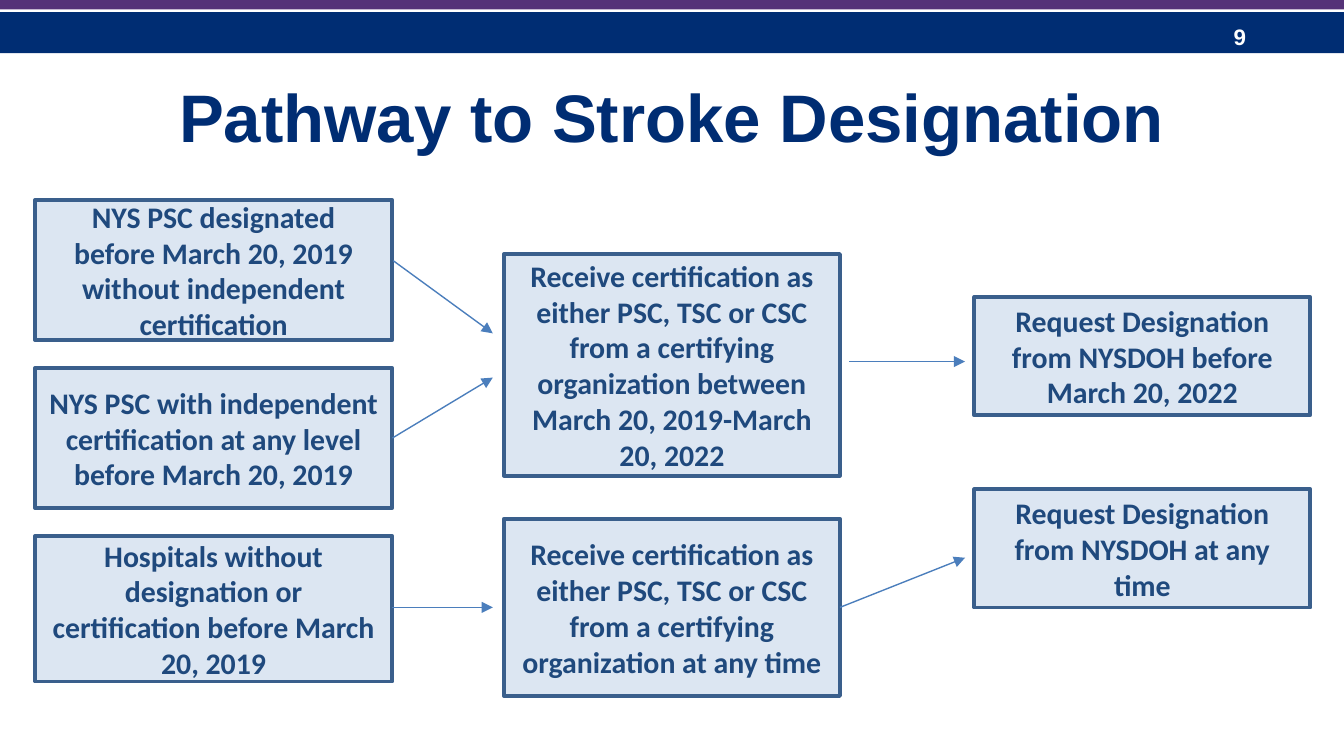
from lxml import etree
from pptx import Presentation
from pptx.dml import color
from pptx.enum import shapes, text
from pptx.oxml import ns
from pptx.util import Pt

COLORS = {
    "navy": "002D73", "purple": "553278", "white": "FFFFFF",
    "box": "DCE6F2", "border": "3A5F8C", "label": "1F497D", "arrow": "4B7EBC",
}
FORMATS = {
    "number": {"name": "Arial", "size": Pt(12), "bold": True},
    "title": {"name": "Arial", "size": Pt(36), "bold": True},
    "step": {"name": "Calibri", "size": Pt(16), "bold": True},
}
STEPS = [
    (0, 107.3, 74.9, "NYS PSC designated before March 20, 2019 without independent certification"),
    (0, 197.3, 74.9, "NYS PSC with independent certification at any level before March 20, 2019"),
    (0, 287.3, 77.8, "Hospitals without designation or certification before March 20, 2019"),
    (1, 136.1, 118.8, "Receive certification as either PSC, TSC or CSC from a certifying "
                      "organization between March 20, 2019-March 20, 2022"),
    (1, 277.9, 95, "Receive certification as either PSC, TSC or CSC from a certifying "
                   "organization at any time"),
    (2, 159.1, 63.4, "Request Designation from NYSDOH before March 20, 2022"),
    (2, 262.1, 63.4, "Request Designation from NYSDOH at any time"),
]
COLUMNS = [(18.7, 191.5), (270, 180), (522, 180)]
ARROWS = [
    (210.7, 139.7, 264, 178.6),
    (210.2, 234.7, 264, 202.3),
    (210.2, 325.4, 264, 325.4),
    (455, 193.7, 517, 193.7),
    (450, 325.4, 517, 298.8),
]


def rgb(name):
    """Return the named colour."""
    return color.RGBColor.from_string(COLORS[name])


def write(shape, words, style, color_name, align, anchor):
    """Put one formatted paragraph into a shape."""
    frame = shape.text_frame
    frame.word_wrap = True
    frame.vertical_anchor = anchor
    paragraph = frame.paragraphs[0]
    paragraph.alignment = align
    run = paragraph.add_run()
    run.text = words
    for key, value in FORMATS[style].items():
        setattr(run.font, key, value)
    run.font.color.rgb = rgb(color_name)


def add_rectangle(slide, box, fill, border=None):
    """Draw a filled rectangle with an optional border."""
    shape = slide.shapes.add_shape(shapes.MSO_SHAPE.RECTANGLE, *map(Pt, box))
    shape.shadow.inherit = False
    shape.fill.solid()
    shape.fill.fore_color.rgb = rgb(fill)
    if border:
        shape.line.color.rgb = rgb(border)
        shape.line.width = Pt(2)
    else:
        shape.line.fill.background()
    return shape


def add_header(slide, left, top, width, height):
    """Draw the header bands and the slide number."""
    add_rectangle(slide, (left, top + 6.5, width, height - 6.5), "navy")
    number = slide.shapes.add_textbox(
        Pt(left + width - 66.2), Pt(top + 8.6), Pt(54), Pt(21.6))
    write(number, "9", "number", "white", text.PP_ALIGN.LEFT, text.MSO_ANCHOR.MIDDLE)
    add_rectangle(slide, (left, top - 1.5, width, 6.5), "purple")


def add_title(slide, left, top, width, height):
    """Write the centred title."""
    title = slide.shapes.add_textbox(Pt(left), Pt(top), Pt(width), Pt(height))
    title.text_frame.margin_top = Pt(7)
    write(title, "Pathway to Stroke Designation", "title", "navy",
          text.PP_ALIGN.CENTER, text.MSO_ANCHOR.TOP)


def add_arrow(slide, start_x, start_y, end_x, end_y):
    """Draw a thin line with a triangle at its end."""
    arrow = slide.shapes.add_connector(
        shapes.MSO_CONNECTOR.STRAIGHT, *map(Pt, (start_x, start_y, end_x, end_y)))
    arrow.line.color.rgb = rgb("arrow")
    arrow.line.width = Pt(0.75)
    etree.SubElement(arrow.line._get_or_add_ln(), ns.qn("a:tailEnd"), type="triangle")
    etree.SubElement(arrow._element.spPr, ns.qn("a:effectLst"))


def add_pathway(slide, left, top):
    """Draw the steps in three columns and the arrows between them."""
    for column, step_top, height, words in STEPS:
        step_left, width = COLUMNS[column]
        step = add_rectangle(
            slide, (left + step_left, top + step_top, width, height), "box", "border")
        write(step, words, "step", "label", text.PP_ALIGN.CENTER, text.MSO_ANCHOR.MIDDLE)
    for start_x, start_y, end_x, end_y in ARROWS:
        add_arrow(slide, left + start_x, top + start_y, left + end_x, top + end_y)


def main():
    """Build and save the presentation."""
    presentation = Presentation()
    presentation.slide_width = Pt(720)
    presentation.slide_height = Pt(405)
    slide = presentation.slides.add_slide(presentation.slide_layouts[6])
    add_header(slide, 0, 0, 720, 28.5)
    add_title(slide, 36, 33.1, 648, 67.7)
    add_pathway(slide, 0, 0)
    presentation.save("out.pptx")


if __name__ == "__main__":
    main()
